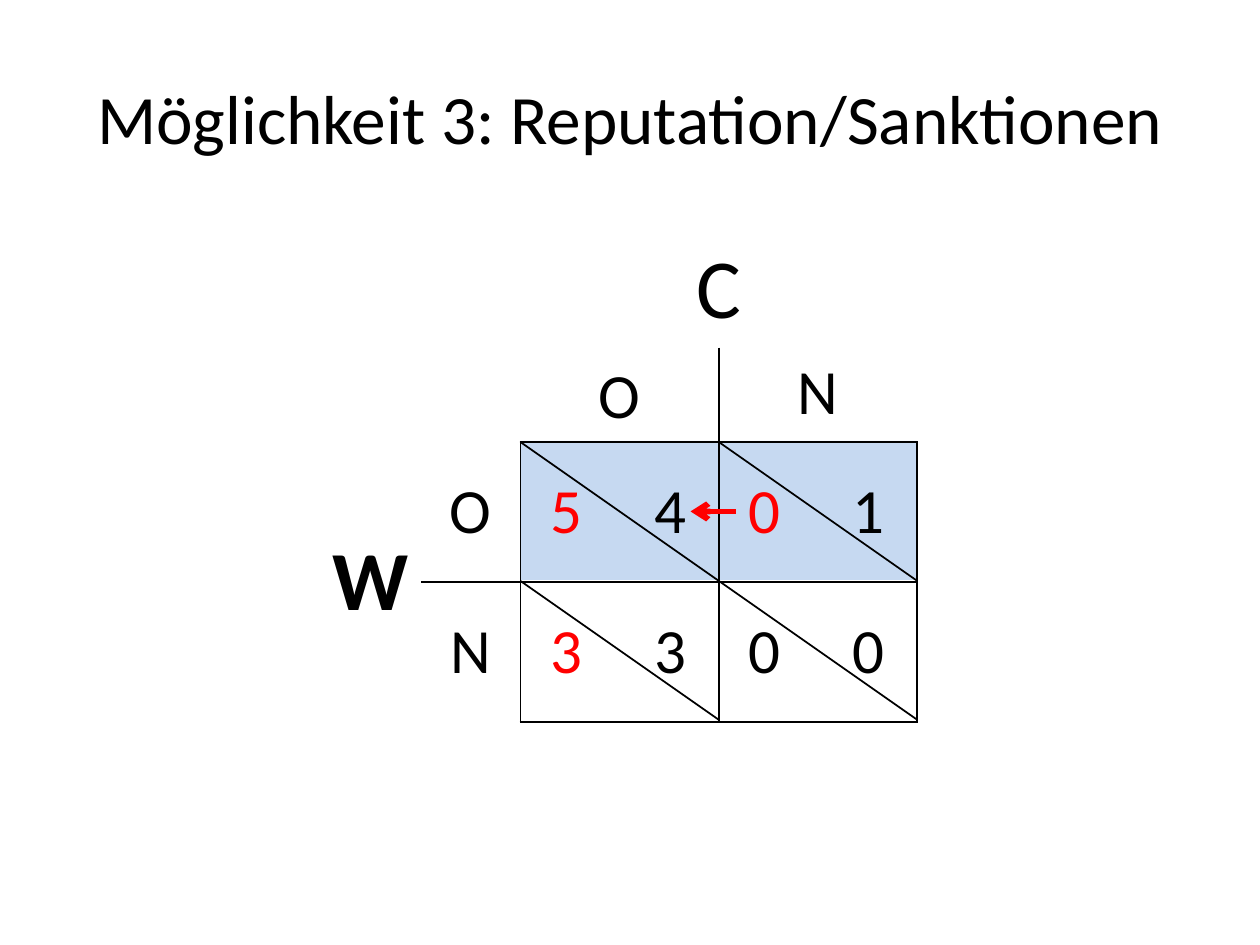
from lxml import etree
from pptx import Presentation
from pptx import util as u
from pptx.dml.color import RGBColor
from pptx.enum import shapes, text
from pptx.oxml.ns import qn

BLACK, RED, BLUE = "000000", "FF0000", "C6D9F1"
CENTER, LEFT, RIGHT = text.PP_ALIGN.CENTER, text.PP_ALIGN.LEFT, text.PP_ALIGN.RIGHT
TOP, MIDDLE, BOTTOM = text.MSO_ANCHOR.TOP, text.MSO_ANCHOR.MIDDLE, text.MSO_ANCHOR.BOTTOM


def add_run(paragraph, words, size, color=BLACK, bold=False):
    run = paragraph.add_run()
    run.text = words
    run.font.name = "Calibri"
    run.font.size = u.Pt(size)
    run.font.bold = bold
    run.font.color.rgb = RGBColor.from_string(color)


def add_line(slide, start, end, color, width):
    line = slide.shapes.add_connector(
        shapes.MSO_CONNECTOR.STRAIGHT, *[u.Cm(value) for value in (*start, *end)])
    line.line.color.rgb = RGBColor.from_string(color)
    line.line.width = u.Pt(width)
    etree.SubElement(line._element.spPr, qn("a:effectLst"))
    return line


presentation = Presentation()
presentation.slide_width = u.Cm(25.4)
presentation.slide_height = u.Cm(19.05)
slide = presentation.slides.add_slide(presentation.slide_layouts[6])

table_left, table_top = 6.1, 4.67
column_widths = [2.39, 2, 4, 4]
row_heights = [2.34, 1.9, 2.82, 2.82]
matrix_left = table_left + sum(column_widths[:2])
matrix_top = table_top + sum(row_heights[:2])
cell_width, cell_height = column_widths[2], row_heights[2]

highlight = slide.shapes.add_shape(
    shapes.MSO_SHAPE.RECTANGLE, u.Cm(matrix_left), u.Cm(matrix_top - 0.02),
    u.Cm(2 * cell_width), u.Cm(cell_height - 0.02))
highlight.shadow.inherit = False
highlight.fill.solid()
highlight.fill.fore_color.rgb = RGBColor.from_string(BLUE)
highlight.line.fill.background()

title = slide.shapes.add_textbox(u.Cm(1.27), u.Cm(0.76), u.Cm(22.86), u.Cm(3.18))
title.text_frame.word_wrap = True
title.text_frame.vertical_anchor = MIDDLE
title.text_frame.paragraphs[0].alignment = CENTER
add_run(title.text_frame.paragraphs[0], "Möglichkeit 3: Reputation/Sanktionen", 39.6)

table_frame = slide.shapes.add_table(
    4, 4, u.Cm(table_left), u.Cm(table_top),
    u.Cm(sum(column_widths)), u.Cm(sum(row_heights)))
table = table_frame.table
table.first_row = table.horz_banding = False
table._tbl.tblPr.find(qn("a:tableStyleId")).text = "{2D5ABB26-0587-4C30-8999-92F81FD0307C}"
for column, width in zip(table.columns, column_widths):
    column.width = u.Cm(width)
for row, height in zip(table.rows, row_heights):
    row.height = u.Cm(height)
for first, last in [((0, 0), (1, 1)), ((0, 2), (0, 3)), ((2, 0), (3, 0))]:
    table.cell(*first).merge(table.cell(*last))

labels = [
    (0, 2, "C", 48, False, CENTER, BOTTOM),
    (1, 2, "O", 36, False, CENTER, BOTTOM),
    (1, 3, "N", 36, False, CENTER, TOP),
    (2, 0, "W", 48, True, RIGHT, MIDDLE),
    (2, 1, "O", 36, False, CENTER, MIDDLE),
    (3, 1, "N", 36, False, CENTER, MIDDLE),
]
for row, column, words, size, bold, alignment, anchor in labels:
    cell = table.cell(row, column)
    cell.vertical_anchor = anchor
    paragraph = cell.text_frame.paragraphs[0]
    paragraph.alignment = alignment
    add_run(paragraph, words, size, bold=bold)

payoffs = [
    (2, 2, "5", "4", RED), (2, 3, "0", "1", RED),
    (3, 2, "3", "3", RED), (3, 3, "0", "0", BLACK),
]
for row, column, first, second, color in payoffs:
    cell = table.cell(row, column)
    cell.vertical_anchor = MIDDLE
    cell.margin_left, cell.margin_right = u.Cm(0.6), 0
    paragraph = cell.text_frame.paragraphs[0]
    paragraph.alignment = LEFT
    tabs = etree.SubElement(paragraph._p.get_or_add_pPr(), qn("a:tabLst"))
    etree.SubElement(tabs, qn("a:tab"), pos=str(u.Cm(2.1)), algn="l")
    add_run(paragraph, first, 36, color)
    add_run(paragraph, "\t" + second, 36)

borders = {(1, 2): "RB", (1, 3): "LB", (2, 1): "RB", (3, 1): "RT"}
borders.update({(row, column): "LRTB" for row, column, *_ in payoffs})
for row in range(4):
    for column in range(4):
        cell = table.cell(row, column)
        cell.fill.background()
        properties = cell._tc.get_or_add_tcPr()
        for position, side in enumerate("LRTB"):
            border = etree.Element(qn("a:ln" + side), w=str(u.Pt(1)))
            if side in borders.get((row, column), ""):
                fill = etree.SubElement(border, qn("a:solidFill"))
                etree.SubElement(fill, qn("a:srgbClr"), val=BLACK)
            else:
                etree.SubElement(border, qn("a:noFill"))
            properties.insert(position, border)

for row in range(2):
    for column in range(2):
        left = matrix_left + column * cell_width
        top = matrix_top + row * (cell_height - 0.02)
        add_line(slide, (left, top), (left + cell_width, top + cell_height - 0.02), BLACK, 1)

arrow = add_line(slide, (14.83, 10.31), (13.92, 10.31), RED, 3.25)
etree.SubElement(arrow.line._get_or_add_ln(), qn("a:tailEnd"), type="arrow")

presentation.save("out.pptx")
